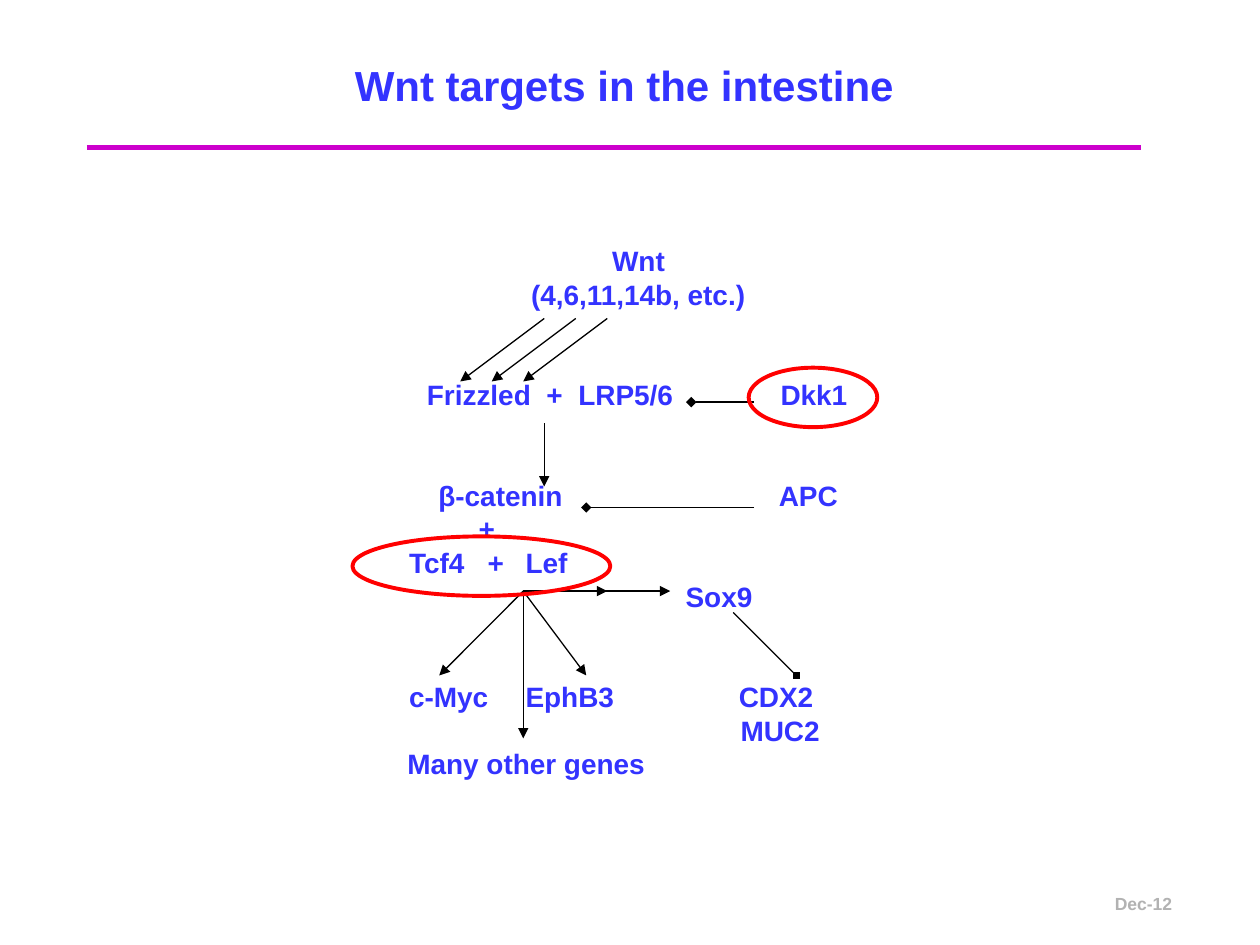
"""Build the slide on Wnt targets in the intestine."""
from lxml.etree import SubElement
from pptx import Presentation
from pptx.dml.color import RGBColor
from pptx.enum.shapes import MSO_CONNECTOR as CONN, MSO_SHAPE as SHAPE
from pptx.enum.text import MSO_ANCHOR as ANCHOR, PP_ALIGN as ALIGN
from pptx.oxml.ns import qn
from pptx.util import Pt

rgb = RGBColor.from_string
BLUE, GREY, RED, BLACK, MAGENTA = "3333FF", "B2B2B2", "FF0000", "000000", "CC00CC"


def write(sp, text, size, color, align=ALIGN.LEFT, anchor=ANCHOR.MIDDLE, inset=(7.2, 3.6)):
    tf = sp.text_frame
    frame = {"word_wrap": True, "vertical_anchor": anchor,
             "margin_left": Pt(inset[0]), "margin_right": Pt(inset[0]),
             "margin_top": Pt(inset[1]), "margin_bottom": Pt(inset[1])}
    for name, value in frame.items():
        setattr(tf, name, value)
    p = tf.paragraphs[0]
    p.alignment = align
    r = p.add_run()
    r.text = text
    for name, value in {"name": "Arial", "size": Pt(size), "bold": True}.items():
        setattr(r.font, name, value)
    r.font.color.rgb = rgb(color)


def connect(x1, y1, x2, y2, color=BLACK, width=0.75, tail=None):
    c = s.shapes.add_connector(CONN.STRAIGHT, Pt(x1), Pt(y1), Pt(x2), Pt(y2))
    c.line.color.rgb = rgb(color)
    c.line.width = Pt(width)
    spPr = c._element.spPr
    if tail:
        SubElement(spPr.find(qn("a:ln")), qn("a:tailEnd"), type=tail)
    SubElement(spPr, qn("a:effectLst"))


prs = Presentation()
prs.slide_width, prs.slide_height = Pt(720), Pt(540)
s = prs.slides.add_slide(prs.slide_layouts[5])

connect(49.7, 84.2, 652.3, 84.2, MAGENTA, 3)

date = s.shapes.add_textbox(Pt(630), Pt(498.2), Pt(84.2), Pt(36))
write(date, "Dec-12", 10, GREY)

title = s.shapes.title
place = {"left": 61.2, "top": 12.2, "width": 591.1, "height": 72}
for name, value in place.items():
    setattr(title, name, Pt(value))
write(title, "Wnt targets in the intestine", 24, BLUE, ALIGN.CENTER)

TOP, PITCH = 139.2, 19.17
LEFT, MID = 233.8, 301.4
labels = [
    (0, 349.8, "Wnt"),
    (1, 303.5, "(4,6,11,14b, etc.)"),
    (4, 244, "Frizzled"), (4, 312.2, "+"), (4, 330.5, "LRP5/6"), (4, 446, "Dkk1"),
    (7, 250.5, "β-catenin"), (7, 445, "APC"),
    (8, 273.5, "+"),
    (9, LEFT, "Tcf4"), (9, 278.7, "+"), (9, MID - 1, "Lef"),
    (10, 391.8, "Sox9"),
    (13, LEFT, "c-Myc"), (13, MID - 1, "EphB3"), (13, 422.2, "CDX2"),
    (14, 423.2, "MUC2"),
    (15, LEFT - 1, "Many other genes"),
]
for row, x, text in labels:
    width = 10 * len(text) + 8
    sp = s.shapes.add_textbox(Pt(x), Pt(TOP + PITCH * row), Pt(width), Pt(PITCH))
    write(sp, text, 16, BLUE, anchor=ANCHOR.TOP, inset=(0, 0))

for x in (311, 329, 347):
    connect(x, 182, x - 48, 218, tail="triangle")
connect(311, 242, 311, 278, tail="triangle")

HUB = (299, 337.8)
for target in ((251, 386), (335, 386), (347, HUB[1]), (299, 422)):
    connect(*HUB, *target, tail="triangle")
connect(335, HUB[1], 383, HUB[1], tail="triangle")

for ends in ((431, 290, 335, 290), (419, 350, 455, 386), (431, 229.8, 395, 229.8)):
    connect(*ends, tail="diamond")

for x, y, width in ((427.8, 210.1, 73.5), (201.4, 306.5, 147.4)):
    ring = s.shapes.add_shape(SHAPE.OVAL, Pt(x), Pt(y), Pt(width), Pt(34))
    ring.shadow.inherit = False
    ring.fill.background()
    ring.line.color.rgb = rgb(RED)
    ring.line.width = Pt(2.25)

prs.save("out.pptx")
